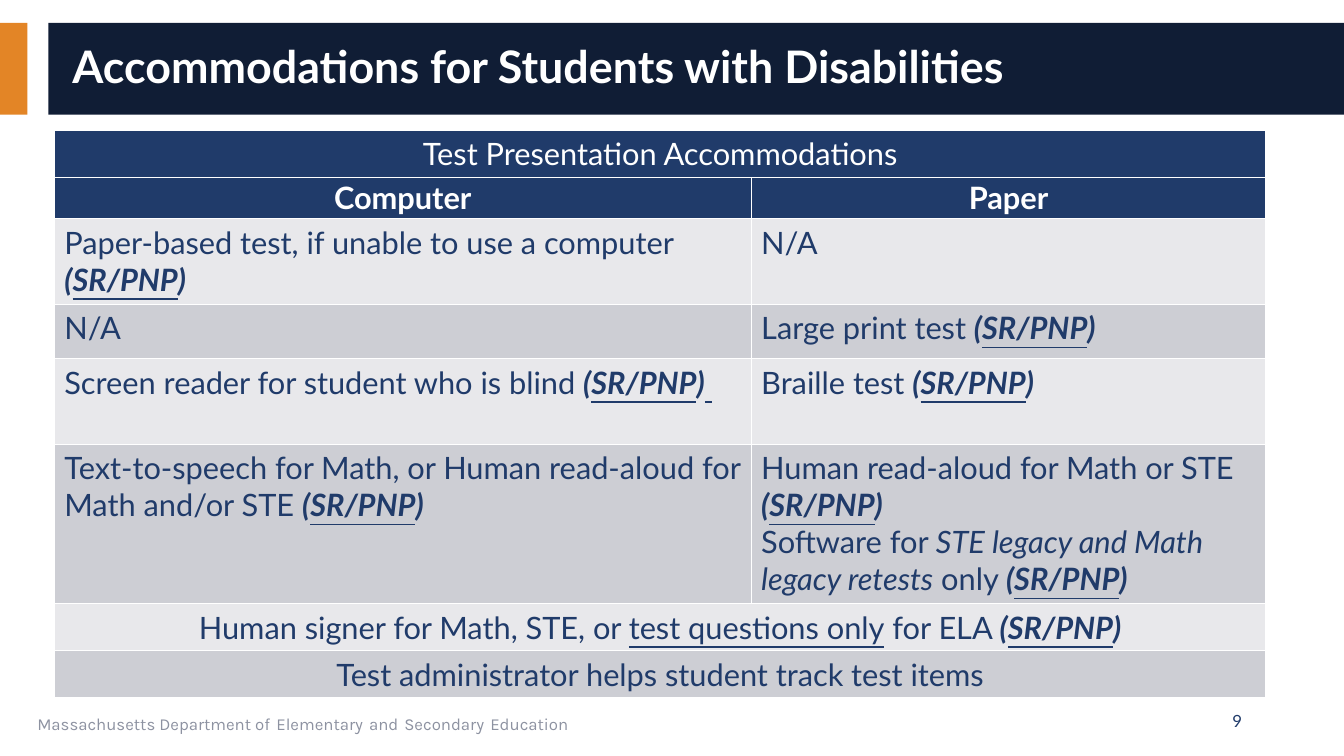
from dataclasses import dataclass

from lxml.etree import SubElement
from pptx import Presentation
from pptx.dml.color import RGBColor
from pptx.enum.shapes import MSO_SHAPE
from pptx.enum.text import MSO_ANCHOR, MSO_AUTO_SIZE, PP_ALIGN
from pptx.oxml.ns import qn
from pptx.util import Cm, Pt


@dataclass(frozen=True)
class Theme:
    orange: str = "E38526"
    navy: str = "101D35"
    blue: str = "203B6A"
    grey: str = "8D92A1"
    white: str = "FFFFFF"
    light: str = "E8E8EB"
    dark: str = "CDCED4"
    font: str = "Lato"
    footer_font: str = "Karla"
    title_size: int = 32
    table_size: int = 22
    footer_size: int = 12
    gap_size: int = 18


def add_span(para, text, *, font, size, color, style=""):
    """Add text to a paragraph; style holds any of the letters b, i and u."""
    span = para.add_run()
    span.text = text
    span.font.name = font
    span.font.size = Pt(size)
    span.font.color.rgb = RGBColor.from_string(color)
    span.font.bold = "b" in style
    span.font.italic = "i" in style
    span.font.underline = "u" in style


class SlideBuilder:
    def __init__(self, page, theme):
        self.page = page
        self.theme = theme

    def band(self, left, top, width, height, color):
        box = self.page.shapes.add_shape(
            MSO_SHAPE.RECTANGLE, Cm(left), Cm(top), Cm(width), Cm(height))
        box.shadow.inherit = False
        box.fill.solid()
        box.fill.fore_color.rgb = RGBColor.from_string(color)
        box.line.fill.background()

    def title(self, text, left, top, width, height):
        box = self.page.shapes.title
        box.left, box.top, box.width, box.height = Cm(left), Cm(top), Cm(width), Cm(height)
        frame = box.text_frame
        frame.auto_size = MSO_AUTO_SIZE.NONE
        frame.vertical_anchor = MSO_ANCHOR.MIDDLE
        para = frame.paragraphs[0]
        para.alignment = PP_ALIGN.LEFT
        para.line_spacing = 0.9
        add_span(para, text, font=self.theme.font, size=self.theme.title_size,
                 color=self.theme.white, style="b")
        # Bring the title in front of the bands
        box.element.getparent().append(box.element)

    def text_line(self, left, top, width, height, *, align=PP_ALIGN.LEFT,
                  anchor=MSO_ANCHOR.TOP):
        box = self.page.shapes.add_textbox(Cm(left), Cm(top), Cm(width), Cm(height))
        box.text_frame.word_wrap = True
        box.text_frame.vertical_anchor = anchor
        para = box.text_frame.paragraphs[0]
        para.alignment = align
        return para

    def table(self, left, top, widths, heights):
        table = self.page.shapes.add_table(
            len(heights), len(widths), Cm(left), Cm(top),
            Cm(sum(widths)), Cm(sum(heights))).table
        for column, width in zip(table.columns, widths):
            column.width = Cm(width)
        for row, height in zip(table.rows, heights):
            row.height = Cm(height)
        return table

    def cell_look(self, cell, fill):
        properties = cell._tc.get_or_add_tcPr()
        for side in ("a:lnL", "a:lnR", "a:lnT", "a:lnB"):
            line = SubElement(properties, qn(side), w=str(Pt(1)))
            SubElement(SubElement(line, qn("a:solidFill")), qn("a:srgbClr"),
                       val=self.theme.white)
        cell.fill.solid()
        cell.fill.fore_color.rgb = RGBColor.from_string(fill)

    def cell_text(self, cell, paragraphs, color, align):
        frame = cell.text_frame
        for index, spans in enumerate(paragraphs):
            para = frame.add_paragraph() if index else frame.paragraphs[0]
            para.alignment = align
            for text, style in spans:
                add_span(para, text, font=self.theme.font,
                         size=self.theme.table_size, color=color, style=style)


# Table content: rows of cells, cells of paragraphs, paragraphs of (text, style)
CODE = [("(", "bi"), ("SR/PNP", "biu"), (")", "bi")]
NOT_AVAILABLE = [[("N/A", "")]]
ROWS = [
    [[[("Test Presentation Accommodations", "")]]],
    [[[("Computer", "b")]], [[("Paper", "b")]]],
    [[[("Paper-based test, if unable to use a computer ", ""), *CODE]], NOT_AVAILABLE],
    [NOT_AVAILABLE, [[("Large print test ", ""), *CODE]]],
    [[[("Screen reader for student who is blind ", ""), *CODE, (" ", "bu")]],
     [[("Braille test ", ""), *CODE]]],
    [[[("Text-to-speech for Math, or Human read-aloud for Math and/or STE ", ""), *CODE]],
     [[("Human read-aloud for Math or STE ", ""), *CODE],
      [("Software for ", ""), ("STE legacy and Math legacy retests", "i"),
       (" only ", ""), *CODE]]],
    [[[("Human signer for Math, STE, or ", ""), ("test questions only", "u"),
       (" for ELA ", ""), *CODE]]],
    [[[("Test administrator helps student track test items", "")]]],
]
ROW_HEIGHTS = [1.19, 1.04, 2.16, 1.37, 2.16, 4.01, 1.19, 1.19]
COLUMN_WIDTHS = [17.56, 12.97]
HEADER_ROWS = 2


def main():
    theme = Theme()
    deck = Presentation()
    deck.slide_width, deck.slide_height = Cm(33.87), Cm(19.05)
    page = deck.slides.add_slide(deck.slide_layouts[5])
    builder = SlideBuilder(page, theme)

    # Title bar
    builder.band(0, 0.58, 0.69, 2.31, theme.orange)
    builder.band(1.22, 0.58, 32.65, 2.31, theme.navy)
    builder.title("Accommodations for Students with Disabilities", 1.57, 0.81, 31.6, 1.88)

    # Footer, with wider gaps between its last words
    footer = builder.text_line(0.69, 17.65, 21.44, 1.02)
    words = ["Massachusetts Department of", "Elementary", "and", "Secondary", "Education"]
    for index, word in enumerate(words):
        if index:
            add_span(footer, " ", font=theme.footer_font, size=theme.gap_size,
                     color=theme.blue)
        add_span(footer, word, font=theme.footer_font, size=theme.footer_size,
                 color=theme.grey)

    # Page number
    number = builder.text_line(23.93, 17.65, 7.62, 1.02, align=PP_ALIGN.RIGHT,
                               anchor=MSO_ANCHOR.MIDDLE)
    add_span(number, "9", font=theme.font, size=theme.footer_size, color=theme.blue)

    # Accommodations table
    table = builder.table(1.37, 3.28, COLUMN_WIDTHS, ROW_HEIGHTS)
    for row, contents in enumerate(ROWS):
        header = row < HEADER_ROWS
        merged = len(contents) == 1
        fill = theme.blue if header else (theme.light, theme.dark)[row % 2]
        for column in range(len(COLUMN_WIDTHS)):
            builder.cell_look(table.cell(row, column), fill)
        if merged:
            table.cell(row, 0).merge(table.cell(row, 1))
        for column, paragraphs in enumerate(contents):
            cell = table.cell(row, column)
            builder.cell_text(cell, paragraphs, theme.white if header else theme.blue,
                              PP_ALIGN.CENTER if header or merged else PP_ALIGN.LEFT)
            if header and not merged:
                cell.vertical_anchor = MSO_ANCHOR.MIDDLE
                cell.margin_left = cell.margin_right = Cm(0.15)
                cell.margin_top = cell.margin_bottom = 0

    deck.save("out.pptx")


if __name__ == "__main__":
    main()
